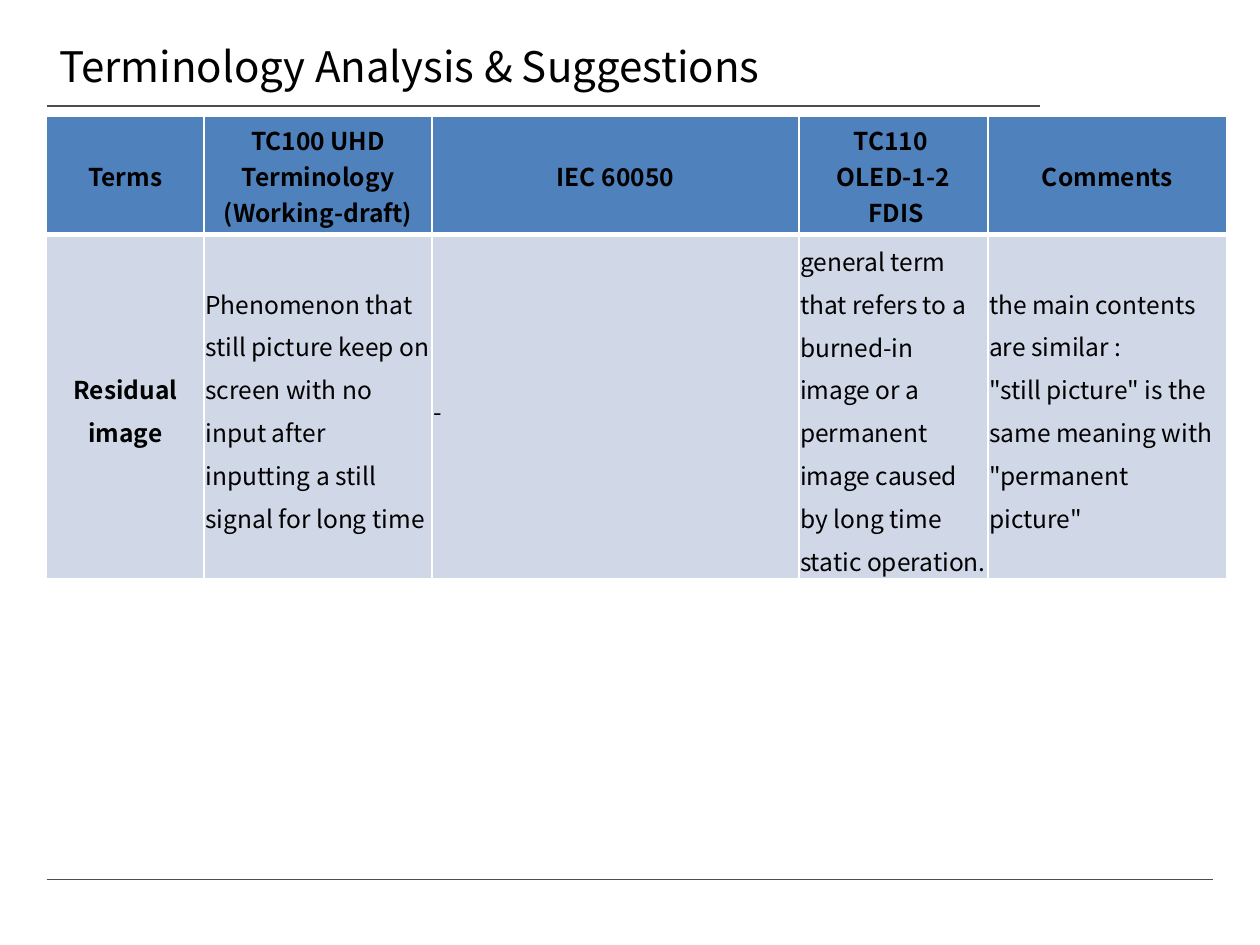
from lxml import etree
from pptx import Presentation
from pptx import util as u
from pptx.dml import color
from pptx.enum import shapes, text
from pptx.oxml import ns


def rgb(value):
    return color.RGBColor.from_string(value)


class SlideBuilder:
    font_name = "Noto Sans CJK SC"
    ink = "000000"
    rule = "4D4D4F"
    border = "FFFFFF"
    header_fill = "4F81BD"
    body_fill = "D0D8E8"

    def __init__(self, slide):
        self.slide = slide

    def style(self, paragraph, size, bold=False):
        paragraph.font.name = self.font_name
        paragraph.font.size = u.Pt(size)
        paragraph.font.bold = bold
        paragraph.font.color.rgb = rgb(self.ink)

    def line(self, left, right, top):
        connector = self.slide.shapes.add_connector(
            shapes.MSO_CONNECTOR.STRAIGHT,
            u.Inches(left), u.Inches(top), u.Inches(right), u.Inches(top))
        connector.line.color.rgb = rgb(self.rule)
        connector.line.width = u.Pt(1)
        etree.SubElement(connector._element.spPr, ns.qn("a:effectLst"))

    def title(self, wording, left, top, width, height):
        shape = self.slide.shapes.add_textbox(*map(u.Inches, (left, top, width, height)))
        frame = shape.text_frame
        frame.word_wrap = True
        frame.vertical_anchor = text.MSO_ANCHOR.MIDDLE
        paragraph = frame.paragraphs[0]
        paragraph.text = wording
        self.style(paragraph, 24)

    def borders(self, cell, top, bottom):
        properties = cell._tc.get_or_add_tcPr()
        for side, width in (("L", 1), ("R", 1), ("T", top), ("B", bottom)):
            edge = etree.SubElement(properties, ns.qn(f"a:ln{side}"), w=str(u.Pt(width)))
            fill = etree.SubElement(edge, ns.qn("a:solidFill"))
            etree.SubElement(fill, ns.qn("a:srgbClr"), val=self.border)

    def cell(self, cell, paragraphs, header, term):
        self.borders(cell, 1 if header else 3, 3 if header else 1)
        cell.fill.solid()
        cell.fill.fore_color.rgb = rgb(self.header_fill if header else self.body_fill)
        cell.vertical_anchor = text.MSO_ANCHOR.MIDDLE
        cell.margin_left = cell.margin_right = cell.margin_top = u.Inches(0.01)
        cell.margin_bottom = 0
        frame = cell.text_frame
        centred = header or term
        for index, wording in enumerate(paragraphs):
            paragraph = frame.add_paragraph() if index else frame.paragraphs[0]
            paragraph.text = wording
            paragraph.alignment = text.PP_ALIGN.CENTER if centred else text.PP_ALIGN.LEFT
            if not header:
                paragraph.line_spacing = 1.2
            self.style(paragraph, 14, bold=centred)

    def table(self, rows, left, top, widths, heights):
        frame = self.slide.shapes.add_table(
            len(rows), len(widths), u.Inches(left), u.Inches(top),
            u.Inches(sum(widths)), u.Inches(sum(heights)))
        table = frame.table
        for column, width in zip(table.columns, widths):
            column.width = u.Inches(width)
        for row, height in zip(table.rows, heights):
            row.height = u.Inches(height)
        for row_index, row in enumerate(rows):
            for column_index, paragraphs in enumerate(row):
                self.cell(table.cell(row_index, column_index), paragraphs,
                          header=row_index == 0, term=column_index == 0)


def main():
    presentation = Presentation()
    presentation.slide_width = u.Inches(10)
    presentation.slide_height = u.Inches(7.5)
    builder = SlideBuilder(presentation.slides.add_slide(presentation.slide_layouts[6]))

    left = 0.37
    builder.line(left, 8.25, 0.84)
    builder.line(left, 9.63, 6.98)
    builder.title("Terminology Analysis & Suggestions", left, 0.21, 6.68, 0.63)

    headings = [
        ["Terms"],
        ["TC100 UHD Terminology\n(Working-draft)"],
        ["IEC 60050"],
        ["TC110 ", "OLED-1-2", " FDIS"],
        ["Comments"],
    ]
    residual_image = [
        ["Residual image"],
        ["Phenomenon that still picture keep on screen with no input "
         "after inputting a still signal for long time"],
        ["-"],
        ["general term that refers to a burned-in image or a permanent image "
         "caused by long time static operation."],
        ["the main contents are similar :\n\"still picture\" is the same meaning "
         "with \"permanent picture\""],
    ]
    builder.table([headings, residual_image], left, 0.92,
                  widths=[1.25, 1.81, 2.91, 1.5, 1.9], heights=[0.94, 2.73])
    presentation.save("out.pptx")


if __name__ == "__main__":
    main()
